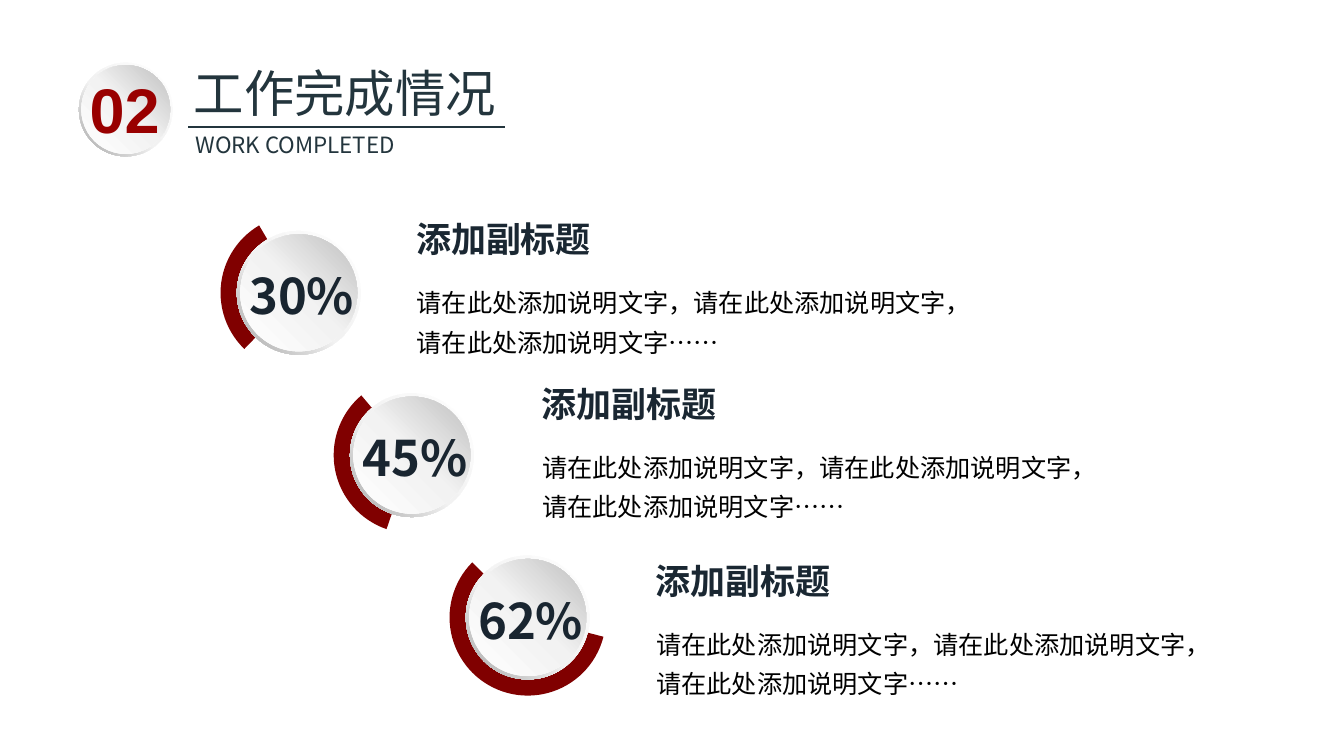
"""Build the work-completed slide: a numbered heading and three progress dials with captions."""
from copy import deepcopy

from lxml import etree
from pptx import Presentation, util as u
from pptx.dml import color
from pptx.enum import shapes, text
from pptx.oxml import ns

COLORS = {
    "heading": "23353D", "arc": "800000", "number": "990000",
    "percent": "192530", "subtitle": "1A2732", "body": "000000",
}
RIM = {"stops": [(0, "FFFFFF"), (0.55, "F2F2F2"), (1, "A6A6A6")], "angle": 225}
FACE = {"stops": [(0, "FFFFFF"), (0.51, "F2F2F2"), (1, "BFBFBF")], "angle": 45}
CJK = "Noto Sans CJK SC"
HEADING_INSETS = (0.18, 0.1)
TEXT_INSETS = (0.25, 0.13)


def write(box, words, size, ink, font=CJK, bold=False, wrap=True,
          insets=TEXT_INSETS, align=text.PP_ALIGN.LEFT, spacing=1.0):
    frame = box.text_frame
    frame.text = words
    side, edge = u.Cm(insets[0]), u.Cm(insets[1])
    frame_format = {
        "word_wrap": wrap, "auto_size": text.MSO_AUTO_SIZE.SHAPE_TO_FIT_TEXT,
        "vertical_anchor": text.MSO_ANCHOR.TOP,
        "margin_left": side, "margin_right": side, "margin_top": edge, "margin_bottom": edge,
    }
    for key, value in frame_format.items():
        setattr(frame, key, value)
    line = frame.paragraphs[0]
    line.alignment, line.line_spacing = align, spacing
    run = line.runs[0]
    for key, value in {"name": font, "size": u.Pt(size), "bold": bold}.items():
        setattr(run.font, key, value)
    run.font.color.rgb = color.RGBColor.from_string(COLORS[ink])
    etree.SubElement(run.font._element, ns.qn("a:ea"), typeface=font)


def badge(parent, center_x, center_y, rim_size, face_size):
    for preset, size, shade in ((shapes.MSO_SHAPE.DONUT, rim_size, RIM),
                                (shapes.MSO_SHAPE.OVAL, face_size, FACE)):
        disc = parent.shapes.add_shape(preset, u.Cm(center_x - size / 2),
                                       u.Cm(center_y - size / 2), u.Cm(size), u.Cm(size))
        disc.shadow.inherit = False
        disc.line.fill.background()
        if preset == shapes.MSO_SHAPE.DONUT:
            disc.adjustments[0] = 0.062
        disc.fill.gradient()
        disc.fill.gradient_angle = shade["angle"]
        stop_list = disc._element.spPr.find(".//" + ns.qn("a:gsLst"))
        stop_list.append(deepcopy(stop_list[0]))
        for stop, (position, tone) in zip(disc.fill.gradient_stops, shade["stops"]):
            stop.position = position
            stop.color.rgb = color.RGBColor.from_string(tone)


deck = Presentation()
deck.slide_width, deck.slide_height = u.Cm(33.87), u.Cm(19.05)
slide = deck.slides.add_slide(deck.slide_layouts[5])

heading = slide.shapes.title
heading.left, heading.top, heading.width, heading.height = map(u.Cm, (4.7, 1.47, 8.08, 1.73))
write(heading, "工作完成情况", 36, "heading", wrap=False, insets=HEADING_INSETS)

english = slide.shapes.add_textbox(u.Cm(4.75), u.Cm(3.2), u.Cm(7.98), u.Cm(0.86))
write(english, "WORK COMPLETED", 16, "heading", insets=HEADING_INSETS,
      align=text.PP_ALIGN.JUSTIFY)

rule = slide.shapes.add_connector(shapes.MSO_CONNECTOR.STRAIGHT,
                                  u.Cm(4.75), u.Cm(3.2), u.Cm(12.73), u.Cm(3.2))
rule.line.color.rgb = color.RGBColor.from_string(COLORS["heading"])
rule.line.width = u.Pt(1.75)
etree.SubElement(rule._element.spPr, ns.qn("a:effectLst"))

ARC_SIZE = 3.94
dials = [
    ("30%", (7.53, 7.38), (134.11, 239.54), (9.91, 5.49)),
    ("45%", (10.38, 11.47), (108.89, 229.77), (13.08, 9.63)),
    ("62%", (13.3, 15.56), (14.27, 224.79), (15.95, 14.1)),
]
for share, (center_x, center_y), angles, (caption_x, caption_y) in dials:
    dial = slide.shapes.add_group_shape()
    arc = dial.shapes.add_shape(shapes.MSO_SHAPE.PIE, u.Cm(center_x - ARC_SIZE / 2),
                                u.Cm(center_y - ARC_SIZE / 2), u.Cm(ARC_SIZE), u.Cm(ARC_SIZE))
    arc.shadow.inherit = False
    arc.fill.solid()
    arc.fill.fore_color.rgb = color.RGBColor.from_string(COLORS["arc"])
    arc.line.fill.background()
    for index, degrees in enumerate(angles):
        arc.adjustments[index] = degrees * 0.6
    badge(dial, center_x, center_y, 3.12, 2.95)
    percent = dial.shapes.add_textbox(u.Cm(center_x - 1.5), u.Cm(center_y - 0.82),
                                      u.Cm(3.25), u.Cm(1.78))
    write(percent, share, 35, "percent", bold=True, wrap=False)

    subtitle = slide.shapes.add_textbox(u.Cm(caption_x), u.Cm(caption_y), u.Cm(5.56), u.Cm(1.07))
    write(subtitle, "添加副标题", 25, "subtitle", bold=True, insets=(0, 0),
          align=text.PP_ALIGN.CENTER)
    body = slide.shapes.add_textbox(u.Cm(caption_x + 0.34), u.Cm(caption_y + 1.4),
                                    u.Cm(14.02), u.Cm(2.16))
    write(body, "请在此处添加说明文字，请在此处添加说明文字，请在此处添加说明文字……",
          18, "body", spacing=1.3)

section = slide.shapes.add_group_shape()
badge(section, 3.17, 2.76, 2.36, 2.24)
number = section.shapes.add_textbox(u.Cm(2.01), u.Cm(1.65), u.Cm(2.29), u.Cm(2.18))
write(number, "02", 45, "number", font="Arial", bold=True, wrap=False)

deck.save("out.pptx")
